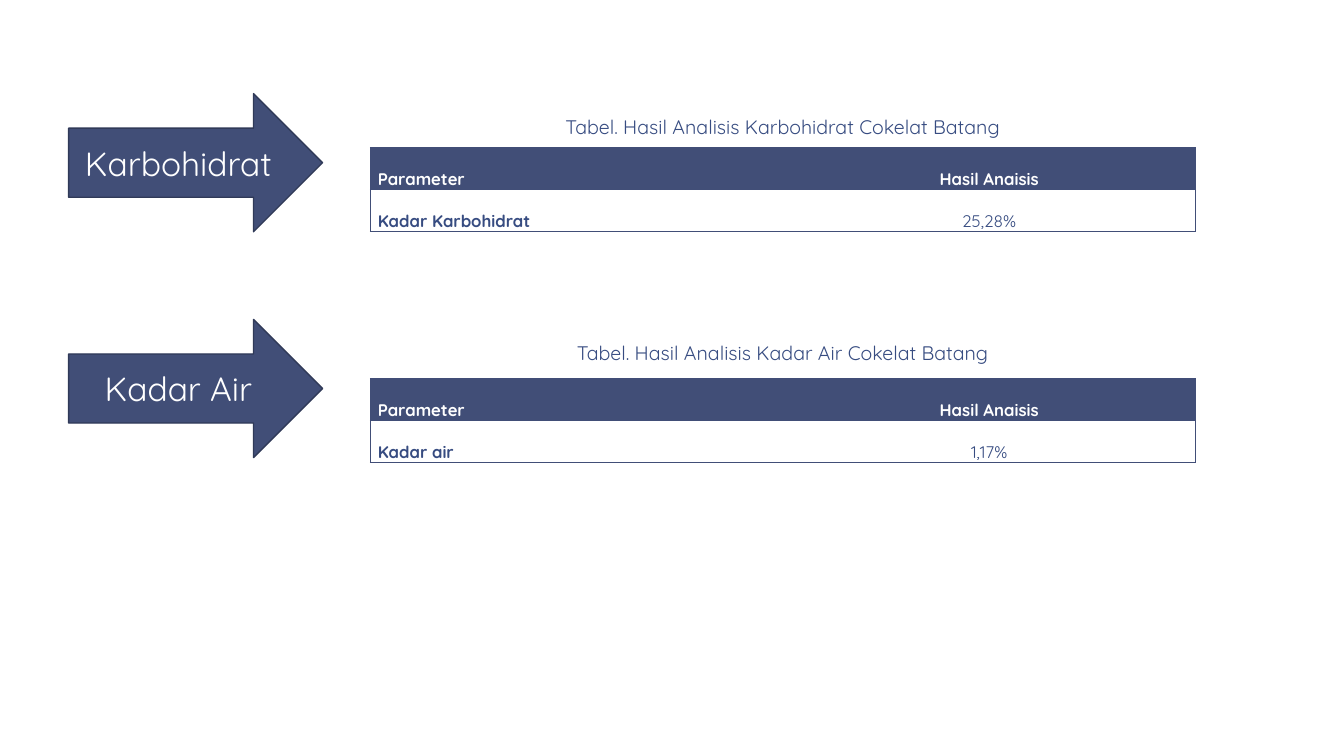
from lxml import etree
from pptx import Presentation, util as u
from pptx.dml.color import RGBColor
from pptx.enum import shapes, text
from pptx.oxml.ns import qn

NAVY, EDGE, INK, WHITE = "414E77", "303A58", "374C81", "FFFFFF"
CENTER, LEFT = text.PP_ALIGN.CENTER, text.PP_ALIGN.LEFT


def color(code):
    return RGBColor.from_string(code)


def write(frame, words, size=12, ink=INK, bold=False, align=CENTER, spacing=1.0):
    para = frame.paragraphs[0]
    para.alignment = align
    para.line_spacing = spacing
    span = para.add_run()
    span.text = words
    span.font.name = "Quicksand"
    span.font.size = u.Pt(size)
    span.font.bold = bold
    span.font.color.rgb = color(ink)


def set_borders(cell, sides):
    """Draw the sides named by the letters L, R, T, B and clear the others."""
    props = cell._tc.get_or_add_tcPr()
    for side in "LRTB":
        line = etree.SubElement(props, qn(f"a:ln{side}"), w=str(u.Pt(0.5)))
        if side in sides:
            fill = etree.SubElement(line, qn("a:solidFill"))
            etree.SubElement(fill, qn("a:srgbClr"), val=NAVY)
        else:
            etree.SubElement(line, qn("a:noFill"))


class ResultSlide:
    def __init__(self, deck):
        self.slide = deck.slides.add_slide(deck.slide_layouts[6])
        self.slide.background.fill.solid()
        self.slide.background.fill.fore_color.rgb = color(WHITE)

    def arrow(self, words, top):
        box = self.slide.shapes.add_shape(
            shapes.MSO_SHAPE.RIGHT_ARROW, u.Cm(1.73), u.Cm(top), u.Cm(6.4), u.Cm(3.48))
        box.shadow.inherit = False
        box.fill.solid()
        box.fill.fore_color.rgb = color(NAVY)
        box.line.color.rgb = color(EDGE)
        box.line.width = u.Pt(1)
        box.text_frame.vertical_anchor = text.MSO_ANCHOR.MIDDLE
        write(box.text_frame, words, size=24, ink=WHITE)

    def caption(self, words, top):
        box = self.slide.shapes.add_textbox(u.Cm(9.33), u.Cm(top), u.Cm(20.8), u.Cm(1.32))
        frame = box.text_frame
        frame.word_wrap = True
        frame.vertical_anchor = text.MSO_ANCHOR.BOTTOM
        frame.margin_left = frame.margin_right = u.Cm(0.33)
        frame.margin_top = frame.margin_bottom = u.Cm(0.18)
        write(frame, words, size=14, spacing=0.85)

    def table(self, rows, top):
        table = self.slide.shapes.add_table(
            len(rows), 2, u.Cm(9.33), u.Cm(top), u.Cm(20.8), u.Cm(2.12)).table
        for r, row in enumerate(rows):
            table.rows[r].height = u.Cm(1.06)
            for c, words in enumerate(row):
                cell = table.cell(r, c)
                cell.margin_left = cell.margin_right = u.Cm(0.19)
                cell.margin_top = cell.margin_bottom = 0
                set_borders(cell, "LR"[c] + ("TB" if r else "T"))
                cell.fill.solid()
                cell.fill.fore_color.rgb = color(WHITE if r else NAVY)
                write(cell.text_frame, words, ink=INK if r else WHITE,
                      bold=r == 0 or c == 0, align=CENTER if c else LEFT, spacing=2.0)


def main():
    deck = Presentation()
    deck.slide_width, deck.slide_height = u.Cm(33.87), u.Cm(19.05)
    page = ResultSlide(deck)
    results = [
        ("Karbohidrat", "Kadar Karbohidrat", "25,28%", 2.36, 2.34, 3.72),
        ("Kadar Air", "Kadar air", "1,17%", 8.05, 8.05, 9.54),
    ]
    for topic, parameter, value, arrow_top, caption_top, table_top in results:
        page.arrow(topic, arrow_top)
        page.caption(f"Tabel. Hasil Analisis {topic} Cokelat Batang", caption_top)
        page.table([("Parameter", "Hasil Anaisis"), (parameter, value)], table_top)
    deck.save("out.pptx")


if __name__ == "__main__":
    main()
